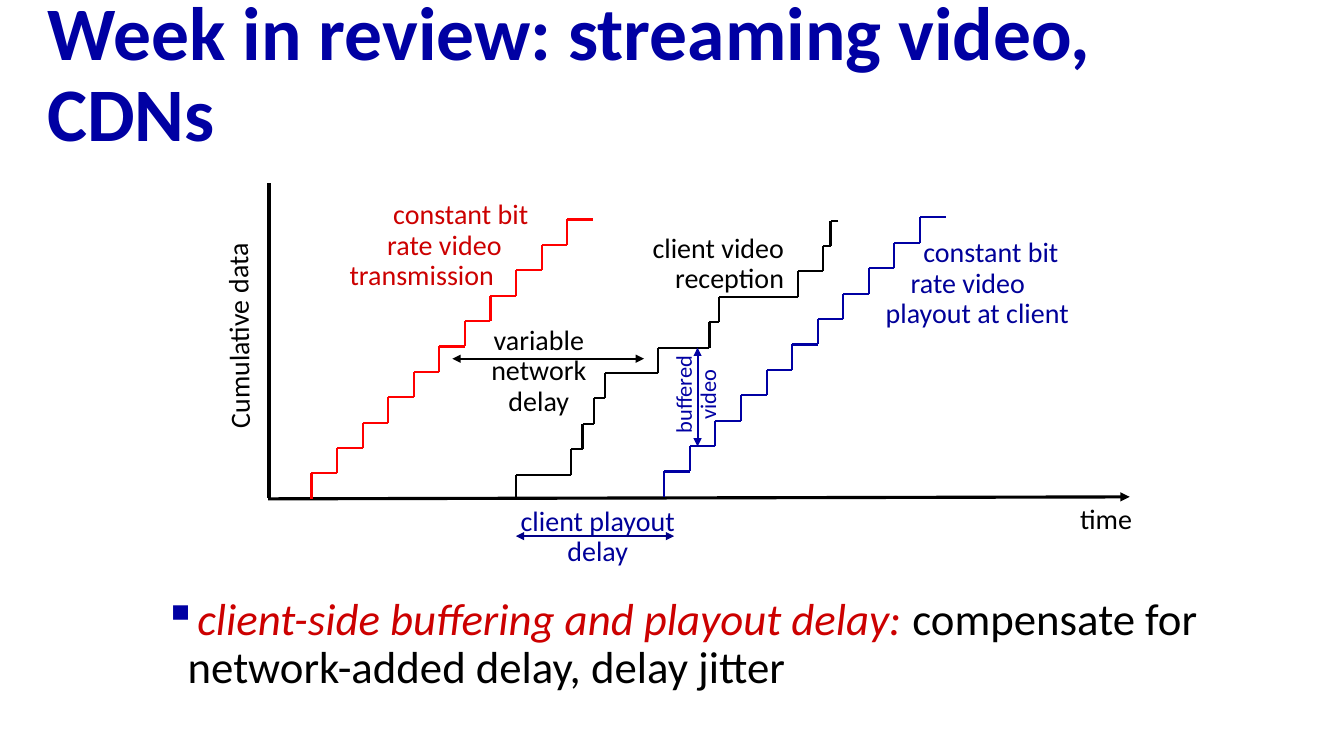
from dataclasses import dataclass
from itertools import pairwise

from lxml import etree
from pptx import Presentation
from pptx import util as u
from pptx.dml.color import RGBColor
from pptx.enum import shapes, text
from pptx.oxml.ns import qn

LEFT, MID, RIGHT = text.PP_ALIGN.LEFT, text.PP_ALIGN.CENTER, text.PP_ALIGN.RIGHT


@dataclass(frozen=True)
class Theme:
    font: str = "Calibri"
    black: str = "000000"
    blue: str = "0000A3"
    navy: str = "000099"
    deep: str = "010086"
    red: str = "FF0000"
    brick: str = "CC0000"
    title: int = 54
    body: int = 32
    label: int = 20
    small: int = 16
    axis: float = 2.25
    thin: float = 1.5


def write(frame, lines, *, font, size, color, align=LEFT, bold=None, indents=()):
    """Fill a frame; each line is a string or a list of (words, color, italic)."""
    for i, line in enumerate(lines):
        para = frame.paragraphs[0] if i == 0 else frame.add_paragraph()
        para.alignment = align
        para.line_spacing = 0.9
        if indents:
            para._p.get_or_add_pPr().set("marL", str(u.Cm(indents[i])))
        parts = [(line, color, None)] if isinstance(line, str) else line
        for words, tint, italic in parts:
            run = para.add_run()
            run.text = words
            run.font.name = font
            run.font.size = u.Pt(size)
            run.font.bold = bold
            run.font.italic = italic
            run.font.color.rgb = RGBColor.from_string(tint)


class Board:
    def __init__(self, slide, theme):
        self.slide = slide
        self.theme = theme

    def title(self, words, box):
        t = self.theme
        shape = self.slide.shapes.title
        shape.left, shape.top, shape.width, shape.height = map(u.Cm, box)
        frame = shape.text_frame
        frame.auto_size = text.MSO_AUTO_SIZE.NONE
        frame.vertical_anchor = text.MSO_ANCHOR.MIDDLE
        write(frame, [words], font=t.font, size=t.title, color=t.blue, bold=True)

    def label(self, lines, box, *, color, size=None, wrap=False, turn=0, **fmt):
        t = self.theme
        shape = self.slide.shapes.add_textbox(*map(u.Cm, box))
        shape.rotation = turn
        frame = shape.text_frame
        frame.word_wrap = wrap
        frame.auto_size = text.MSO_AUTO_SIZE.SHAPE_TO_FIT_TEXT
        write(frame, lines, font=t.font, size=size or t.label, color=color, **fmt)

    def bullet(self, parts, box):
        t = self.theme
        shape = self.slide.shapes.add_textbox(*map(u.Cm, box))
        frame = shape.text_frame
        frame.word_wrap = True
        write(frame, [parts], font=t.font, size=t.body, color=t.black, indents=[1])
        para = frame.paragraphs[0]
        para.space_before = u.Pt(10)
        props = para._p.get_or_add_pPr()
        props.set("indent", str(u.Cm(-0.6)))
        tint = etree.SubElement(props, qn("a:buClr"))
        etree.SubElement(tint, qn("a:srgbClr"), val=t.blue)
        etree.SubElement(props, qn("a:buChar"), char="▪")

    def line(self, start, end, color, width=None, heads=()):
        """Draw a straight line; heads names its arrow ends, headEnd before tailEnd."""
        link = self.slide.shapes.add_connector(
            shapes.MSO_CONNECTOR.STRAIGHT, *map(u.Cm, (*start, *end)))
        link.line.color.rgb = RGBColor.from_string(color)
        link.line.width = u.Pt(width or self.theme.thin)
        for head in heads:
            etree.SubElement(link.line._get_or_add_ln(), qn(f"a:{head}"), type="triangle")
        etree.SubElement(link._element.spPr, qn("a:effectLst"))

    def stairs(self, xs, base, color, rise=0.64):
        """Climb one rise at each x, then run level to the next x."""
        for i, (x, after) in enumerate(pairwise(xs)):
            low = base - i * rise
            high = low - rise
            self.line((x, high), (x, low), color)
            self.line((after, high), (x, high), color)


def even(first, last, steps=11):
    return [first + (last - first) * i / steps for i in range(steps + 1)]


def main():
    deck = Presentation()
    deck.slide_width, deck.slide_height = u.Cm(33.87), u.Cm(19.05)
    t = Theme()
    b = Board(deck.slides.add_slide(deck.slide_layouts[5]), t)
    both = ("headEnd", "tailEnd")

    b.title("Week in review: streaming video, CDNs", (0.94, 0, 31.22, 3.86))

    # Axes
    b.line((6.78, 4.62), (6.78, 12.55), t.black, t.axis)
    b.line((28.47, 12.52), (6.76, 12.57), t.black, t.axis, ("headEnd",))
    b.label(["Cumulative data"], (3.33, 7.82, 5.44, 1.02), color=t.black,
            wrap=True, turn=269.4)
    b.label(["time"], (26.97, 12.6, 1.85, 1.02), color=t.black)

    # Transmission
    b.label(["constant bit", "rate video", "transmission"], (8.56, 4.93, 5.23, 2.57),
            color=t.brick, indents=[1.1, 0.95, 0])
    b.stairs(even(7.85, 14.94), 12.57, t.red)

    # Reception
    arrivals = [13, 14.4, 14.68, 14.96, 15.24, 16.59, 17.88, 18.11,
                20.12, 20.73, 20.93, 21.13]
    b.stairs(arrivals, 12.6, t.black)
    b.label(["variable", "network", "delay"], (12.12, 8.1, 2.92, 2.57),
            color=t.black, align=MID)
    b.line((11.4, 9.04), (16.23, 9.04), t.black, heads=both)
    b.label(["client video", "reception"], (16.15, 5.77, 3.86, 1.8),
            color=t.black, align=RIGHT)

    # Playout
    b.stairs(even(16.74, 23.83), 12.52, t.blue)
    b.label(["constant bit", "rate video", "playout at client"], (21.92, 5.89, 5.33, 2.57),
            color=t.navy, indents=[1.1, 0.78, 0.15])
    b.label(["client playout", "delay"], (12.73, 12.65, 4.67, 1.8),
            color=t.navy, wrap=True, align=MID)
    b.line((13, 13.51), (16.99, 13.51), t.deep, heads=both)
    b.line((17.58, 11.25), (17.58, 8.76), t.blue, heads=both)
    b.label(["buffered", "video"], (16.33, 9.19, 2.49, 1.5),
            color=t.blue, size=t.small, turn=270, align=MID)

    b.bullet([("client-side buffering and playout delay: ", t.brick, True),
              ("compensate for network-added delay, delay jitter", t.black, False)],
             (3.48, 14.91, 29.21, 2.46))
    deck.save("out.pptx")


if __name__ == "__main__":
    main()
